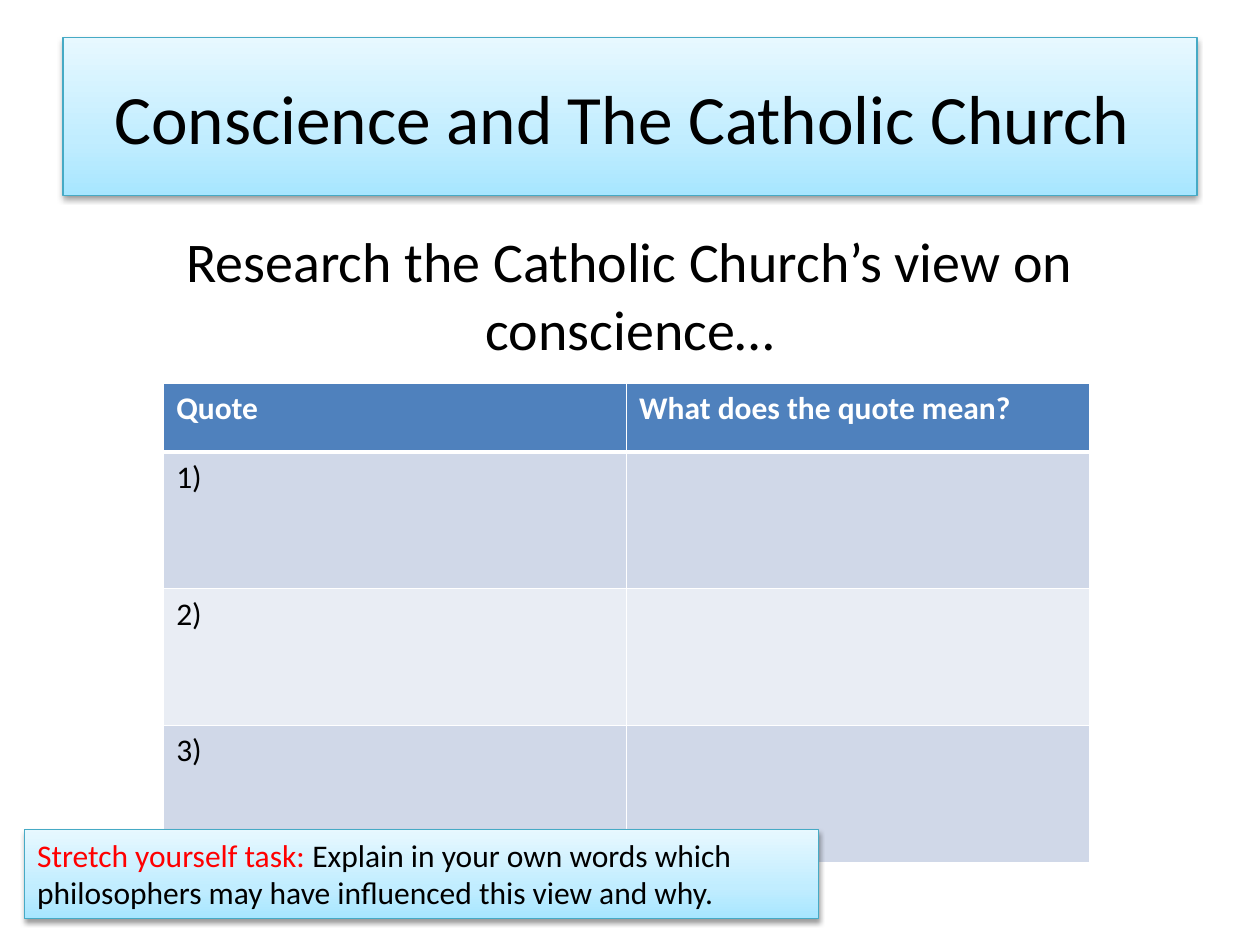
from lxml import etree
from pptx import Presentation
from pptx.dml.color import RGBColor
from pptx.enum.shapes import MSO_SHAPE
from pptx.enum.text import MSO_ANCHOR, PP_ALIGN
from pptx.oxml import parse_xml
from pptx.oxml.ns import nsdecls
from pptx.util import Cm, Pt

RECTANGLE = MSO_SHAPE.RECTANGLE
TOP, MIDDLE = MSO_ANCHOR.TOP, MSO_ANCHOR.MIDDLE
LEFT, CENTER = PP_ALIGN.LEFT, PP_ALIGN.CENTER

FONT = "Calibri"
BLACK = RGBColor(0x00, 0x00, 0x00)
WHITE = RGBColor(0xFF, 0xFF, 0xFF)
RED = RGBColor(0xFF, 0x00, 0x00)
TEAL = RGBColor(0x46, 0xAA, 0xC5)
HEADER_BLUE = RGBColor(0x4F, 0x81, 0xBD)
BANDS = (RGBColor(0xD0, 0xD8, 0xE8), RGBColor(0xE9, 0xED, 0xF4))
PANEL_STOPS = (
    (0, RGBColor(0xA7, 0xE6, 0xFF)),
    (35, RGBColor(0xC1, 0xED, 0xFF)),
    (100, RGBColor(0xE7, 0xF8, 0xFF)),
)

ROWS = (("Quote", "What does the quote mean?"), ("1)", ""), ("2)", ""), ("3)", ""))
HEADER_HEIGHT, ROW_HEIGHT, COLUMN_WIDTH = Cm(1.38), Cm(2.76), Cm(9.33)


def add_run(paragraph, text, size, color=BLACK, bold=False):
    """Append one formatted run to a paragraph."""
    run = paragraph.add_run()
    run.text = text
    run.font.name = FONT
    run.font.size = Pt(size)
    run.font.bold = bold
    run.font.color.rgb = color


def write_text(shape, runs, size, align, anchor):
    """Fill a shape with one wrapped paragraph of coloured runs."""
    frame = shape.text_frame
    frame.word_wrap = True
    frame.vertical_anchor = anchor
    paragraph = frame.paragraphs[0]
    paragraph.alignment = align
    for text, color in runs:
        add_run(paragraph, text, size, color)


def add_panel(slide, left, top, width, height):
    """Add a rectangle with a vertical gradient and a soft shadow."""
    shape = slide.shapes.add_shape(RECTANGLE, left, top, width, height)
    stops = "".join(
        f'<a:gs pos="{position * 1000}"><a:srgbClr val="{color}"/></a:gs>'
        for position, color in PANEL_STOPS
    )
    properties = shape.element.spPr
    properties.append(parse_xml(
        f'<a:gradFill {nsdecls("a")} rotWithShape="1"><a:gsLst>{stops}</a:gsLst>'
        '<a:lin ang="16200000" scaled="0"/></a:gradFill>'
    ))
    shape.line.color.rgb = TEAL
    shape.line.width = Pt(0.75)
    properties.append(parse_xml(
        f'<a:effectLst {nsdecls("a")}><a:outerShdw blurRad="{Pt(3.1)}" dist="{Pt(1.6)}" '
        'dir="5400000" rotWithShape="0"><a:srgbClr val="000000">'
        '<a:alpha val="38000"/></a:srgbClr></a:outerShdw></a:effectLst>'
    ))
    return shape


def set_borders(cell, widths):
    """Draw white borders with the given width in points for each side."""
    properties = cell._tc.get_or_add_tcPr()
    for side, width in widths.items():
        border = parse_xml(f'<a:ln{side} {nsdecls("a")} w="{Pt(width)}"/>')
        fill = etree.SubElement(border, f"{{{border.nsmap['a']}}}solidFill")
        etree.SubElement(fill, f"{{{border.nsmap['a']}}}srgbClr", val=str(WHITE))
        properties.append(border)


def add_quote_table(slide):
    """Add the table of quotes with a header and banded rows."""
    columns = len(ROWS[0])
    height = HEADER_HEIGHT + ROW_HEIGHT * (len(ROWS) - 1)
    table = slide.shapes.add_table(
        len(ROWS), columns, Cm(3.3), Cm(7.73), COLUMN_WIDTH * columns, height
    ).table
    for column in table.columns:
        column.width = COLUMN_WIDTH
    for index, texts in enumerate(ROWS):
        header = index == 0
        table.rows[index].height = HEADER_HEIGHT if header else ROW_HEIGHT
        widths = {"L": 1, "R": 1, "T": 3 if index == 1 else 1, "B": 3 if header else 1}
        for cell, text in zip(table.rows[index].cells, texts):
            set_borders(cell, widths)
            cell.fill.solid()
            cell.fill.fore_color.rgb = HEADER_BLUE if header else BANDS[(index - 1) % 2]
            if text:
                add_run(cell.text_frame.paragraphs[0], text, 18,
                        WHITE if header else BLACK, header)


def main():
    """Build the slide and save it."""
    presentation = Presentation()
    presentation.slide_width, presentation.slide_height = Cm(25.4), Cm(19.05)
    slide = presentation.slides.add_slide(presentation.slide_layouts[6])

    title = add_panel(slide, Cm(1.27), Cm(0.76), Cm(22.86), Cm(3.18))
    write_text(title, [("Conscience and The Catholic Church ", BLACK)], 39.6, CENTER, MIDDLE)

    instruction = slide.shapes.add_textbox(Cm(1.27), Cm(4.45), Cm(22.86), Cm(12.57))
    write_text(instruction, [("Research the Catholic Church’s view on conscience…", BLACK)],
               32, CENTER, TOP)

    add_quote_table(slide)

    stretch_task = add_panel(slide, Cm(0.5), Cm(16.72), Cm(16), Cm(1.8))
    write_text(stretch_task, [
        ("Stretch yourself task: ", RED),
        ("Explain in your own words which philosophers may have influenced "
         "this view and why.", BLACK),
    ], 18, LEFT, TOP)

    presentation.save("out.pptx")


if __name__ == "__main__":
    main()
